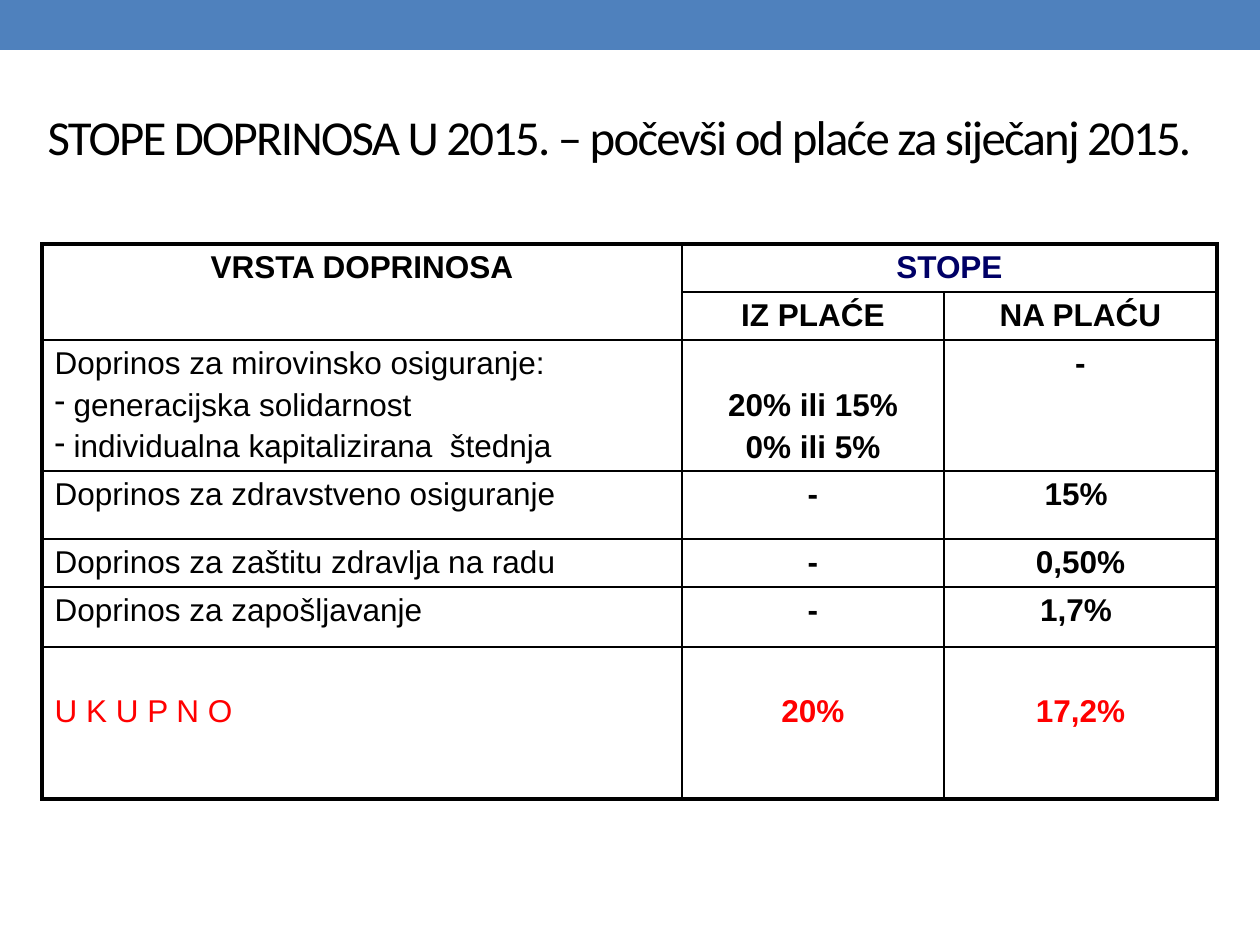
from dataclasses import dataclass

from lxml import etree
from pptx import Presentation
from pptx import util as u
from pptx.dml.color import RGBColor
from pptx.enum import shapes, text
from pptx.oxml.ns import qn

PX = 914400 // 126
BLACK, NAVY, RED, BLUE, WHITE = "000000", "000066", "FF0000", "4F81BD", "FFFFFF"
LEFT, CENTER = text.PP_ALIGN.LEFT, text.PP_ALIGN.CENTER
TOP, MIDDLE, BOTTOM = text.MSO_ANCHOR.TOP, text.MSO_ANCHOR.MIDDLE, text.MSO_ANCHOR.BOTTOM
COLUMNS = (640, 262, 273)
ROWS = (48, 48, 131, 68, 48, 60, 152)
HANGING = 19


@dataclass(frozen=True)
class Entry:
    row: int
    col: int
    lines: tuple[str, ...]
    bold: bool = True
    align: int = CENTER
    color: str = BLACK
    anchor: int = TOP
    lift: int = 0


def label(row: int, *lines: str, **kwargs) -> Entry:
    return Entry(row, 0, lines, bold=False, align=LEFT, **kwargs)


def rate(row: int, col: int, *lines: str, **kwargs) -> Entry:
    return Entry(row, col, lines, **kwargs)


TOTAL = {"color": RED, "anchor": MIDDLE, "lift": 22}
ENTRIES = (
    rate(0, 0, "VRSTA DOPRINOSA"),
    rate(0, 1, "STOPE", color=NAVY),
    rate(1, 1, "IZ PLAĆE"),
    rate(1, 2, "NA PLAĆU"),
    label(2, "Doprinos za mirovinsko osiguranje:", "- generacijska solidarnost",
          "- individualna kapitalizirana  štednja"),
    rate(2, 1, "20% ili 15%", "0% ili 5%", anchor=BOTTOM),
    rate(2, 2, "-"),
    label(3, "Doprinos za zdravstveno osiguranje"),
    rate(3, 1, "-"),
    rate(3, 2, "15% "),
    label(4, "Doprinos za zaštitu zdravlja na radu"),
    rate(4, 1, "-"),
    rate(4, 2, "0,50%"),
    label(5, "Doprinos za zapošljavanje"),
    rate(5, 1, "-"),
    rate(5, 2, "1,7% "),
    label(6, "U K U P N O", **TOTAL),
    rate(6, 1, "20%", **TOTAL),
    rate(6, 2, "17,2%", **TOTAL),
)


def px(length: int) -> u.Emu:
    return u.Emu(length * PX)


def rgb(color: str) -> RGBColor:
    return RGBColor.from_string(color)


def apply(target, values: dict) -> None:
    for name, value in values.items():
        setattr(target, name, value)


def style_font(font, size: float, name: str, color: str, bold: bool) -> None:
    apply(font, {"size": u.Pt(size), "name": name, "bold": bold})
    font.color.rgb = rgb(color)


def add_dash(para) -> None:
    props = para._p.get_or_add_pPr()
    props.set("marL", str(px(HANGING)))
    props.set("indent", str(-px(HANGING)))
    etree.SubElement(props, qn("a:buChar")).set("char", "-")


def draw_borders(cell, row: int, col: int) -> None:
    """Thick lines on the outside of the table, thin ones within."""
    outer = {
        "L": col == 0,
        "R": col + (cell.span_width if cell.is_merge_origin else 1) == len(COLUMNS),
        "T": row == 0,
        "B": row + 1 == len(ROWS),
    }
    for side, thick in outer.items():
        line = etree.SubElement(cell._tc.get_or_add_tcPr(), qn(f"a:ln{side}"))
        line.set("w", str(u.Pt(2.25 if thick else 1)))
        fill = etree.SubElement(line, qn("a:solidFill"))
        etree.SubElement(fill, qn("a:srgbClr")).set("val", BLACK)


def write_entry(cell, entry: Entry) -> None:
    cell.vertical_anchor = entry.anchor
    cell.margin_bottom = u.Inches(0.05) + px(entry.lift)
    frame = cell.text_frame
    for index, line in enumerate(entry.lines):
        para = frame.paragraphs[0] if index == 0 else frame.add_paragraph()
        para.alignment = entry.align
        if index:
            para.space_before = u.Pt(3.6)
        if line.startswith("- "):
            add_dash(para)
        span = para.add_run()
        span.text = line.removeprefix("- ")
        style_font(span.font, 18, "Arial", entry.color, entry.bold)


def add_rates_table(page) -> None:
    frame = page.shapes.add_table(len(ROWS), len(COLUMNS), px(42), px(244),
                                  px(sum(COLUMNS)), px(sum(ROWS)))
    table = frame.table
    apply(table, {"first_row": False, "horz_banding": False})
    for column, width in zip(table.columns, COLUMNS):
        column.width = px(width)
    for row, height in zip(table.rows, ROWS):
        row.height = px(height)
    table.cell(0, 0).merge(table.cell(1, 0))
    table.cell(0, 1).merge(table.cell(0, 2))
    for row in range(len(ROWS)):
        for col in range(len(COLUMNS)):
            cell = table.cell(row, col)
            draw_borders(cell, row, col)
            cell.fill.solid()
            cell.fill.fore_color.rgb = rgb(WHITE)
    for entry in ENTRIES:
        write_entry(table.cell(entry.row, entry.col), entry)


def add_top_band(page, width: int, height: int) -> None:
    band = page.shapes.add_shape(shapes.MSO_SHAPE.RECTANGLE, 0, 0, px(width), px(height))
    band.shadow.inherit = False
    band.fill.solid()
    band.fill.fore_color.rgb = rgb(BLUE)
    band.line.fill.background()


def write_title(page) -> None:
    title = page.shapes.title
    apply(title, {"left": px(35), "top": px(0), "width": px(1181), "height": px(204)})
    frame = title.text_frame
    apply(frame, {"word_wrap": True, "auto_size": text.MSO_AUTO_SIZE.NONE,
                  "vertical_anchor": MIDDLE, "margin_top": px(74)})
    para = frame.paragraphs[0]
    para.alignment = LEFT
    span = para.add_run()
    span.text = "STOPE DOPRINOSA U 2015. – počevši od plaće za siječanj 2015."
    style_font(span.font, 27.9, "Calibri", BLACK, False)
    span._r.get_or_add_rPr().set("spc", "-100")


def main() -> None:
    deck = Presentation()
    apply(deck, {"slide_width": px(1260), "slide_height": px(945)})
    page = deck.slides.add_slide(deck.slide_layouts[5])
    add_top_band(page, 1260, 50)
    write_title(page)
    add_rates_table(page)
    deck.save("out.pptx")


if __name__ == "__main__":
    main()
